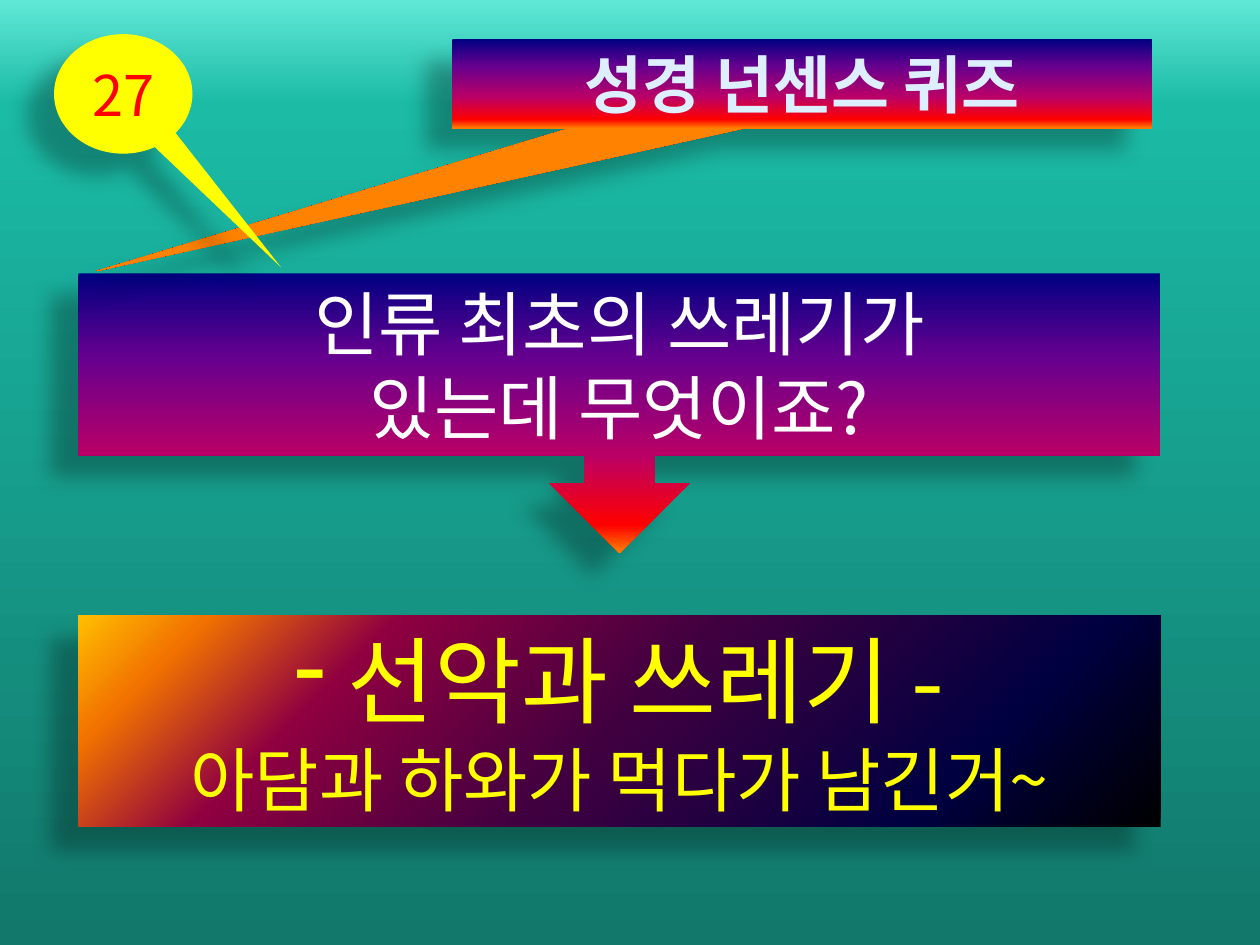
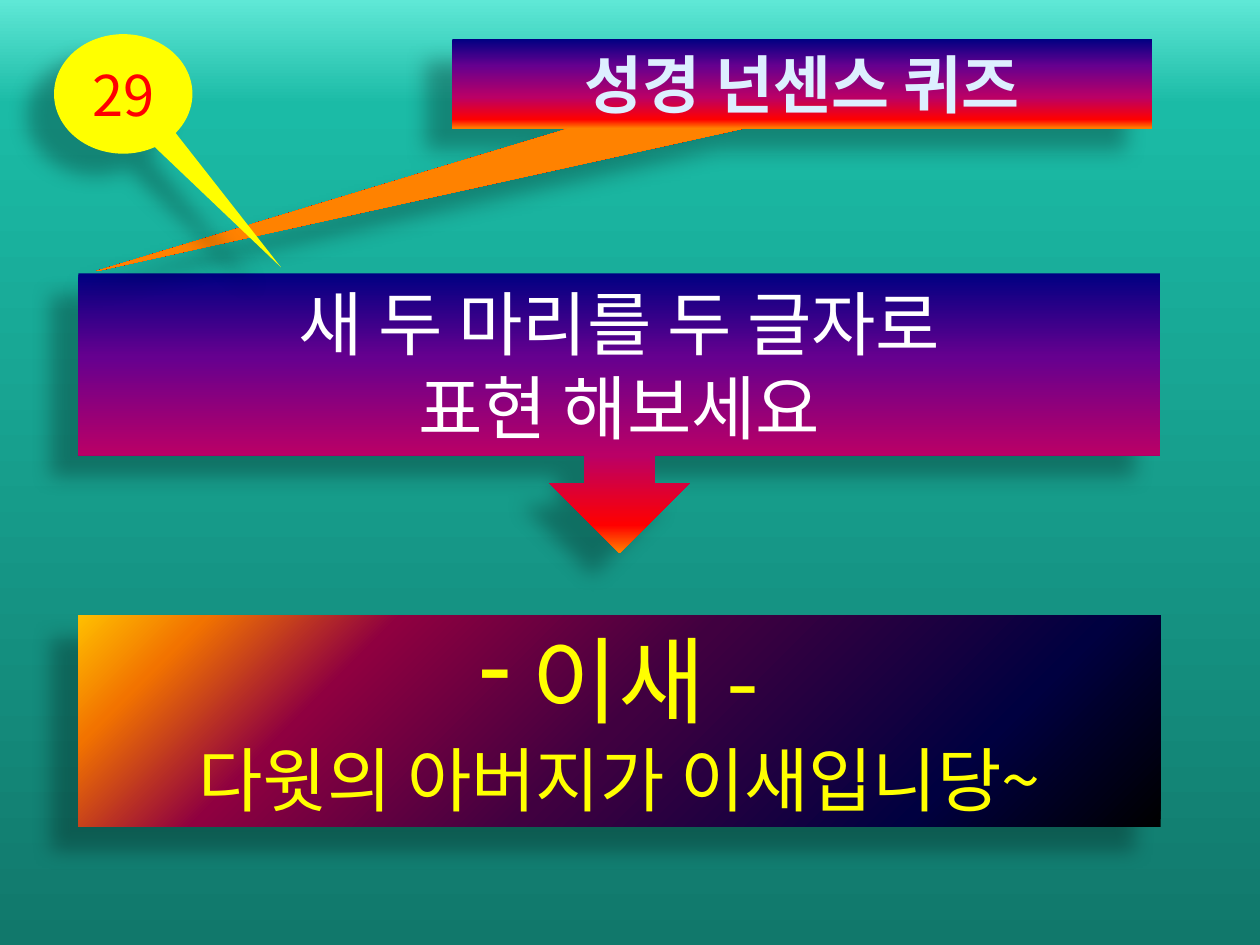
from lxml.etree import SubElement
from pptx import Presentation
from pptx.dml.color import RGBColor
from pptx.enum.shapes import MSO_SHAPE
from pptx.enum.text import MSO_ANCHOR, MSO_AUTO_SIZE, PP_ALIGN
from pptx.oxml.ns import qn
from pptx.util import Cm, Pt

FONT = "Noto Sans CJK KR"
LINE_HEIGHT = 1.21
COLORS = {
    "question": "FFFFFF",
    "title": "DDEFFF",
    "title_outline": "455978",
    "answer": "FFFF00",
    "balloon": "FFFF00",
    "number": "FF0000",
    "shadow": "000000",
}
GRADIENTS = {
    "background": ([(0, "11786B"), (89, "1BBBA6"), (100, "5FE8D6")], 270),
    "sunset": ([(0, "000082"), (30, "66008F"), (65, "BA0066"),
                (90, "FF0000"), (100, "FF8200")], 90),
    "night": ([(0, "000000"), (20, "000040"), (50, "400040"),
               (75, "8F0040"), (90, "F27300"), (100, "FFBF00")], 225),
}
TITLE = "성경 넌센스 퀴즈"
QUIZZES = [
    ("27", ["인류 최초의 쓰레기가", "있는데 무엇이죠?"],
     " 선악과 쓰레기 -", "아담과 하와가 먹다가 남긴거~"),
    ("29", ["새 두 마리를 두 글자로", "표현 해보세요"],
     " 이새 -", "다윗의 아버지가 이새입니당~"),
]


def add_color(parent, color):
    return SubElement(parent, qn("a:srgbClr"), val=color)


def apply_gradient(fill, properties, name):
    stops, angle = GRADIENTS[name]
    fill.solid()
    solid = properties.find(".//" + qn("a:solidFill"))
    gradient = SubElement(properties, qn("a:gradFill"), rotWithShape="1")
    stop_list = SubElement(gradient, qn("a:gsLst"))
    for position, color in stops:
        add_color(SubElement(stop_list, qn("a:gs"), pos=str(position * 1000)), color)
    SubElement(gradient, qn("a:lin"), ang=str(angle * 60000), scaled="0")
    solid.getparent().replace(solid, gradient)


def add_shadow(shape):
    shape.shadow.inherit = False
    effects = shape.element.spPr.find(qn("a:effectLst"))
    shadow = SubElement(effects, qn("a:outerShdw"), blurRad=str(Pt(11.8)),
                        dist=str(Pt(19.7)), dir=str(141 * 60000),
                        algn="ctr", rotWithShape="0")
    SubElement(add_color(shadow, COLORS["shadow"]), qn("a:alpha"), val="28000")


def add_box(slide, kind, left, top, width, height, gradient=None, tail=()):
    shape = slide.shapes.add_shape(kind, Cm(left), Cm(top), Cm(width), Cm(height))
    for index, value in enumerate(tail):
        shape.adjustments[index] = value
    if gradient:
        apply_gradient(shape.fill, shape.element.spPr, gradient)
    else:
        shape.fill.solid()
        shape.fill.fore_color.rgb = RGBColor.from_string(COLORS["balloon"])
    shape.line.fill.background()
    add_shadow(shape)
    frame = shape.text_frame
    frame.word_wrap = True
    if gradient:
        frame.vertical_anchor = MSO_ANCHOR.TOP
        frame.auto_size = MSO_AUTO_SIZE.SHAPE_TO_FIT_TEXT
    else:
        frame.vertical_anchor = MSO_ANCHOR.MIDDLE
    return shape


def write_lines(shape, color, lines):
    frame = shape.text_frame
    for index, (text, size) in enumerate(lines):
        paragraph = frame.add_paragraph() if index else frame.paragraphs[0]
        paragraph.text = text
        paragraph.alignment = PP_ALIGN.CENTER
        paragraph.line_spacing = Pt(size * LINE_HEIGHT)
        paragraph.font.size = Pt(size)
        paragraph.font.color.rgb = RGBColor.from_string(COLORS[color])
        paragraph.font.name = FONT
        defaults = paragraph._p.pPr.find(qn("a:defRPr"))
        SubElement(defaults, qn("a:ea"), typeface=FONT)
    return frame.paragraphs[0]


def add_dash_bullet(paragraph):
    properties = paragraph._p.pPr
    bullet = SubElement(properties, qn("a:buChar"), char="-")
    properties.find(qn("a:defRPr")).addprevious(bullet)


def outline_text(paragraph, color):
    defaults = paragraph._p.pPr.find(qn("a:defRPr"))
    outline = SubElement(defaults, qn("a:ln"), w=str(Pt(1)))
    add_color(SubElement(outline, qn("a:solidFill")), color)
    defaults.insert(0, outline)


def add_question(slide, lines):
    shape = add_box(slide, MSO_SHAPE.DOWN_ARROW_CALLOUT,
                    1.58, 5.51, 21.82, 5.64, "sunset")
    write_lines(shape, "question", [(line, 40) for line in lines])


def add_title(slide):
    shape = add_box(slide, MSO_SHAPE.RECTANGULAR_CALLOUT,
                    9.12, 0.79, 14.1, 1.8, "sunset", (-1.01, 2.1))
    paragraph = write_lines(shape, "title", [(TITLE, 36)])
    paragraph.font.bold = True
    outline_text(paragraph, COLORS["title_outline"])


def add_answer(slide, answer, reason):
    shape = add_box(slide, MSO_SHAPE.RECTANGLE, 1.58, 12.4, 21.82, 4.27, "night")
    add_dash_bullet(write_lines(shape, "answer", [(answer, 54), (reason, 40)]))


def add_number(slide, number):
    shape = add_box(slide, MSO_SHAPE.OVAL_CALLOUT,
                    1.09, 0.69, 2.79, 2.41, tail=(1.14, 1.45))
    write_lines(shape, "number", [(number, 32)])


def main():
    presentation = Presentation()
    presentation.slide_width, presentation.slide_height = Cm(25.4), Cm(19.05)
    master = presentation.slide_master
    background_fill = master.background.fill
    background_fill.solid()
    apply_gradient(background_fill, master.element.find(".//" + qn("p:bgPr")),
                   "background")
    for number, question, answer, reason in QUIZZES:
        slide = presentation.slides.add_slide(presentation.slide_layouts[6])
        add_question(slide, question)
        add_title(slide)
        add_answer(slide, answer, reason)
        add_number(slide, number)
    presentation.save("out.pptx")


if __name__ == "__main__":
    main()
